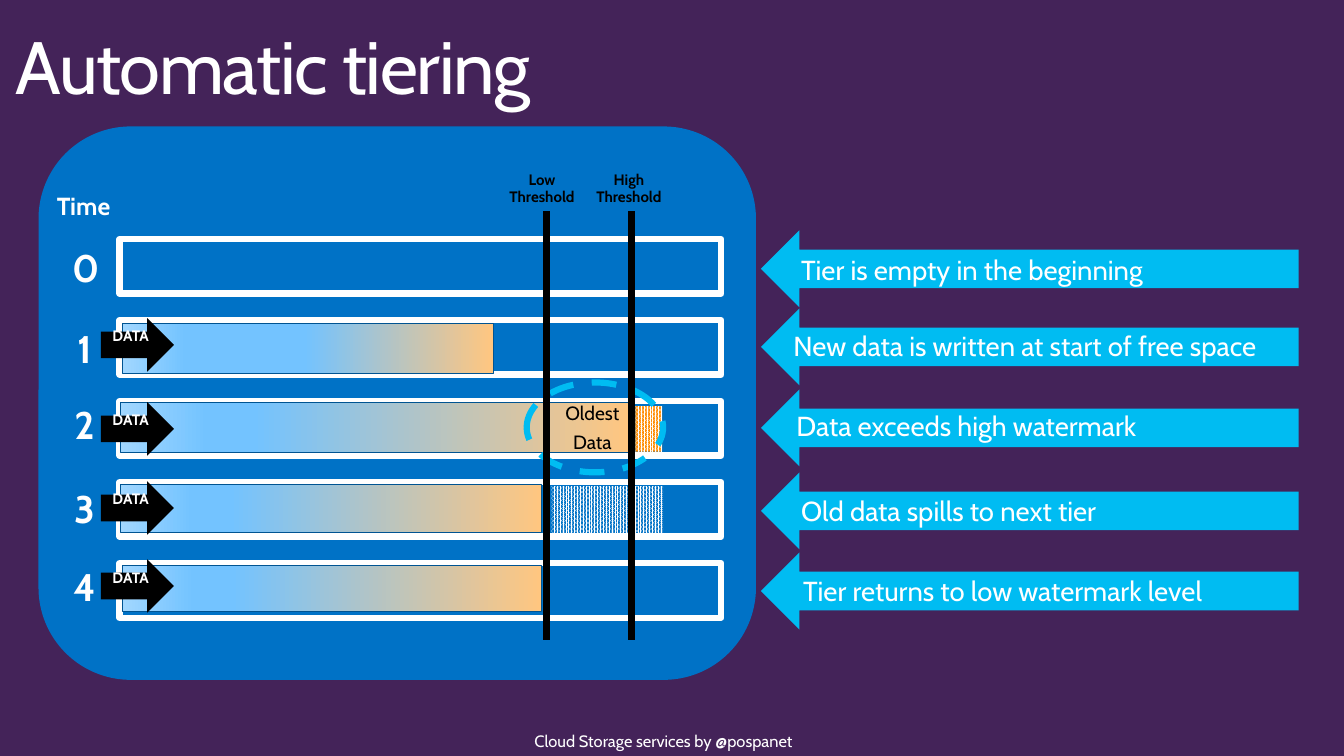
from pptx import Presentation
from pptx.dml.color import RGBColor
from pptx.enum.dml import MSO_LINE, MSO_PATTERN
from pptx.enum.shapes import MSO_CONNECTOR, MSO_SHAPE
from pptx.enum.text import MSO_ANCHOR, PP_ALIGN
from pptx.oxml.ns import qn
from pptx.util import Inches, Pt
from lxml.etree import SubElement

COLUMNS, ROWS = 136, 76.5
WHITE, BLACK, BLUE, CYAN = "FFFFFF", "000000", "0072C6", "00BCF2"
ROOMY = (2, 1.6, 2, 1.6)
SNUG = (1, 0.5, 1, 0.5)


def color(hex_code):
    return RGBColor.from_string(hex_code)


class TieringSlide:
    """Places styled elements on a grid of columns and rows."""
    font = "Cabin"

    def __init__(self, deck, background):
        self.slide = deck.slides.add_slide(deck.slide_layouts[6])
        self.shapes = self.slide.shapes
        self.column = deck.slide_width / COLUMNS
        self.row = deck.slide_height / ROWS
        self.slide.background.fill.solid()
        self.slide.background.fill.fore_color.rgb = color(background)

    def place(self, x, y, width, height):
        return (round(x * self.column), round(y * self.row),
                round(width * self.column), round(height * self.row))

    def shape(self, kind, box, fill=None, line=None, weight=4.5):
        part = self.shapes.add_shape(kind, *self.place(*box))
        part.shadow.inherit = False
        if fill:
            part.fill.solid()
            part.fill.fore_color.rgb = color(fill)
        else:
            part.fill.background()
        if line:
            part.line.color.rgb = color(line)
            part.line.width = Pt(weight)
        else:
            part.line.fill.background()
        return part

    def frame(self, box):
        outline = self.shape(MSO_SHAPE.RECTANGLE, box, line=WHITE)
        SubElement(outline.element.spPr.find(qn("a:ln")), qn("a:round"))

    def gradient(self, box, middle):
        bar = self.shape(MSO_SHAPE.RECTANGLE, box, line="005492", weight=0.85)
        bar.fill.gradient()
        bar.fill.gradient_angle = 180
        stops = bar.element.spPr.find(qn("a:gradFill")).find(qn("a:gsLst"))
        for old_stop in list(stops):
            stops.remove(old_stop)
        for share, shade in ((0, "FFC680"), (middle, "73C3FF"),
                             (83, "73C3FF"), (100, "A1D7FF")):
            stop = SubElement(stops, qn("a:gs"), pos=str(share * 1000))
            SubElement(stop, qn("a:srgbClr"), val=shade)

    def pattern(self, box, back):
        patch = self.shape(MSO_SHAPE.RECTANGLE, box)
        patch.fill.patterned()
        patch.fill.pattern = MSO_PATTERN.PERCENT_80
        patch.fill.fore_color.rgb = color(WHITE)
        patch.fill.back_color.rgb = color(back)

    def style_text(self, part, words, size, ink=WHITE, bold=False, centered=False,
                   insets=SNUG, spacing=None, after=0, anchor=MSO_ANCHOR.TOP,
                   wrap=True, tracking=None):
        frame = part.text_frame
        frame.text = words
        frame.word_wrap = wrap
        frame.vertical_anchor = anchor
        left, top, right, bottom = insets
        frame.margin_left = round(left * self.column)
        frame.margin_top = round(top * self.row)
        frame.margin_right = round(right * self.column)
        frame.margin_bottom = round(bottom * self.row)
        for paragraph in frame.paragraphs:
            paragraph.alignment = PP_ALIGN.CENTER if centered else PP_ALIGN.LEFT
            paragraph.space_after = Pt(after)
            if spacing:
                paragraph.line_spacing = spacing
            for run in paragraph.runs:
                run.font.name = self.font
                run.font.size = Pt(size)
                run.font.bold = bold
                run.font.color.rgb = color(ink)
                if tracking:
                    run.font._element.set("spc", str(tracking * 100))

    def text(self, box, words, size, **style):
        self.style_text(self.shapes.add_textbox(*self.place(*box)), words, size, **style)

    def label(self, box, words, size, **style):
        self.text(box, words, size, centered=True, insets=ROOMY, spacing=0.9, **style)

    def data_arrow(self, y):
        arrow = self.shape(MSO_SHAPE.RIGHT_ARROW, (10.2, y, 7.4, 5.4), BLACK)
        self.style_text(arrow, "DATA", 11, bold=True, centered=True, spacing=0.9,
                        insets=(0, 0, 0, 1.6), anchor=MSO_ANCHOR.MIDDLE)

    def caption(self, arrow_y, x, y, words):
        arrow = self.shape(MSO_SHAPE.RIGHT_ARROW, (77, arrow_y, 54.4, 7.8), CYAN)
        arrow.rotation = 180
        self.text((x, y, 52, 4.4), words, 20)

    def threshold(self, x, top, bottom):
        x, top, _, height = self.place(x, top, 0, bottom - top)
        rule = self.shapes.add_connector(MSO_CONNECTOR.STRAIGHT, x, top, x, top + height)
        rule.line.color.rgb = color(BLACK)
        rule.line.width = Pt(4.5)
        SubElement(rule.element.spPr, qn("a:effectLst"))


def main():
    deck = Presentation()
    deck.slide_width, deck.slide_height = Inches(13.6), Inches(7.65)
    page = TieringSlide(deck, "442359")

    # Footer, title and panel
    page.text((53.1, 73.5, 29.9, 3), "Cloud Storage services by @pospanet", 12, wrap=False)
    page.text((0, 2.1, 136, 7.2), "Automatic tiering", 54, spacing=0.9,
              insets=(1.6, 1, 1.6, 1), tracking=-1)
    page.shape(MSO_SHAPE.ROUNDED_RECTANGLE, (3.9, 12.8, 72.6, 56), BLUE)

    # Tier frames at an even pitch
    for step in range(5):
        page.frame((12.1, 24.2 + 8.2 * step, 60.9, 5.5))

    # Headings and time steps
    for x, words in ((49, "Low Threshold"), (57.8, "High Threshold")):
        page.label((x, 15.9, 11.7, 6.6), words, 11, ink=BLACK, bold=True, after=6)
    page.label((2, 18.3, 12.9, 6), "Time", 18, bold=True, after=6)
    for step, y in enumerate((23.6, 31.8, 39.5, 48, 55.9)):
        page.label((5.3, y, 6.5, 4.3), str(step), 28, bold=True)

    # Stored data and the blocks that spill over
    for box, middle in (((12.4, 32.7, 37.5, 5.1), 51), ((12.2, 40.7, 51.5, 5.1), 74),
                        ((12.2, 49, 42.6, 4.9), 74), ((12.4, 57.2, 42.4, 4.7), 74)):
        page.gradient(box, middle)
    page.pattern((64.3, 41.1, 2.7, 4.6), "FF8C00")
    page.pattern((55.8, 49.2, 11.3, 4.7), BLUE)

    # Oldest data marker
    marker = page.shape(MSO_SHAPE.OVAL, (53.3, 38.7, 13.8, 9.1), line=CYAN)
    marker.line.dash_style = MSO_LINE.DASH
    page.label((52.1, 39.3, 15.7, 8.3), "Oldest\nData", 14, ink=BLACK, after=6)

    # Captions: arrow top, text left, text top, words
    for caption in ((23.3, 80.1, 25.1, "Tier is empty in the beginning"),
                    (31.2, 79.3, 32.8, "New data is written at start of free space"),
                    (39.4, 79.6, 40.9, "Data exceeds high watermark"),
                    (47.8, 80.1, 49.5, "Old data spills to next tier"),
                    (55.9, 80.3, 57.6, "Tier returns to low watermark level")):
        page.caption(*caption)

    # Incoming data and threshold lines
    for y in (32.2, 40.7, 48.7, 56.6):
        page.data_arrow(y)
    for x in (55.3, 63.9):
        page.threshold(x, 21.4, 64.8)

    deck.save("out.pptx")


if __name__ == "__main__":
    main()
